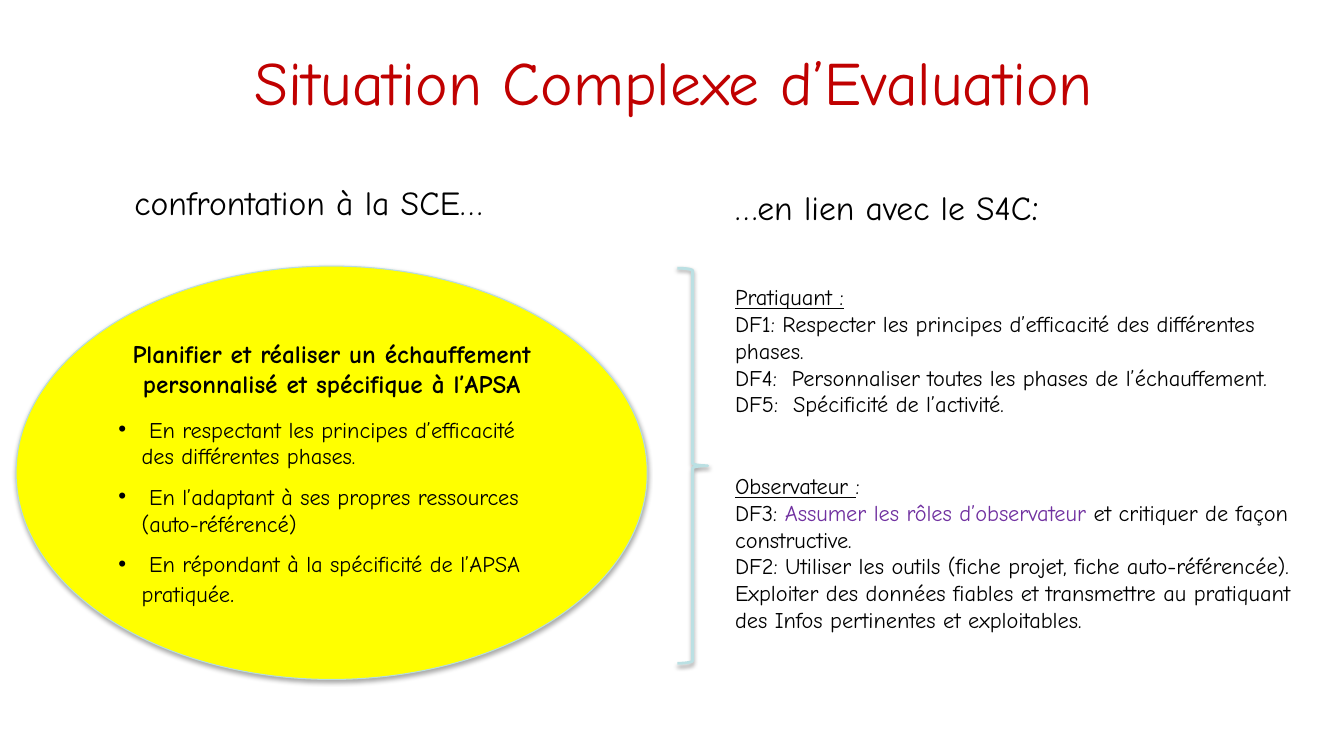
from dataclasses import dataclass

from lxml.etree import SubElement
from pptx import Presentation
from pptx.dml.color import RGBColor
from pptx.enum.shapes import MSO_SHAPE
from pptx.enum.text import MSO_ANCHOR, MSO_AUTO_SIZE, PP_ALIGN
from pptx.oxml.ns import qn
from pptx.util import Inches, Pt

BLACK = RGBColor(0x00, 0x00, 0x00)
RED = RGBColor(0xC0, 0x00, 0x00)
PURPLE = RGBColor(0x70, 0x30, 0xA0)
YELLOW = RGBColor(0xFF, 0xFF, 0x00)
RIM = RGBColor(0xB6, 0xDC, 0xDF)
TEAL = RGBColor(0xBB, 0xE0, 0xE3)
WIDE, HIGH = Inches(13.33), Inches(7.5)
GAP = 39  # space above each role, in points
HANG = Inches(0.23)


@dataclass
class Box:
    """Place and size in percent of the slide."""
    x: float
    y: float
    w: float
    h: float

    def area(self) -> tuple:
        return (round(WIDE * self.x / 100), round(HIGH * self.y / 100),
                round(WIDE * self.w / 100), round(HIGH * self.h / 100))


@dataclass
class Run:
    text: str
    size: float = 16
    color: RGBColor = BLACK
    font: str = "Comic Neue"
    bold: bool = False
    line: bool = False


@dataclass
class Para:
    runs: list
    gap: float = 0
    align: PP_ALIGN = PP_ALIGN.LEFT
    dot: bool = False


def write(shape, paras: list, anchor: MSO_ANCHOR) -> None:
    frame = shape.text_frame
    frame.word_wrap = True
    frame.auto_size = MSO_AUTO_SIZE.NONE
    frame.vertical_anchor = anchor
    for i, para in enumerate(paras):
        p = frame.add_paragraph() if i else frame.paragraphs[0]
        p.alignment = para.align
        p.space_before = Pt(para.gap)
        props = p._p.get_or_add_pPr()
        props.set("marL", str(HANG if para.dot else 0))
        props.set("indent", str(-HANG if para.dot else 0))
        if para.dot:
            SubElement(props, qn("a:buFont"), typeface="Arial")
            SubElement(props, qn("a:buChar"), char="•")
        else:
            SubElement(props, qn("a:buNone"))
        for item in para.runs:
            run = p.add_run()
            run.text = item.text
            font = run.font
            font.name, font.size = item.font, Pt(item.size)
            font.bold, font.underline = item.bold, item.line
            font.color.rgb = item.color


def place(holder, box: Box, paras: list, anchor: MSO_ANCHOR) -> None:
    holder.left, holder.top, holder.width, holder.height = box.area()
    write(holder, paras, anchor)


def draw(slide, kind: MSO_SHAPE, box: Box, rim: RGBColor, width: float,
         fill: RGBColor | None, drop: float, shade: int):
    shape = slide.shapes.add_shape(kind, *box.area())
    if fill is None:
        shape.fill.background()
    else:
        shape.fill.solid()
        shape.fill.fore_color.rgb = fill
    shape.line.color.rgb = rim
    shape.line.width = Pt(width)
    # Soft shadow straight below
    shape.shadow.inherit = False
    glow = SubElement(shape._element.spPr.find(qn("a:effectLst")), qn("a:outerShdw"),
                      blurRad=str(Pt(3.1)), dist=str(Pt(drop)),
                      dir="5400000", rotWithShape="0")
    tint = SubElement(glow, qn("a:srgbClr"), val=str(BLACK))
    SubElement(tint, qn("a:alpha"), val=str(shade * 1000))
    return shape


TITLE = [Para([Run("Situation Complexe d’Evaluation", 44, RED)], align=PP_ALIGN.CENTER)]
LEFT = [Para([Run(" ", 24, font="Arial"), Run("confrontation à la SCE…", 24)])]
RIGHT = [
    Para([Run("…en lien avec le S4C", 24), Run(":", 28)]),
    Para([Run("Pratiquant :", line=True)], GAP),
    Para([Run("DF1: Respecter les principes d’efficacité des différentes phases.")]),
    Para([Run("DF4:  Personnaliser toutes les phases de l’échauffement.")]),
    Para([Run("DF5:  Spécificité de l’activité.")]),
    Para([Run("Observateur ", line=True), Run(":")], GAP),
    Para([Run("DF3: "), Run("Assumer les rôles d’observateur ", color=PURPLE),
          Run("et critiquer de façon constructive.")]),
    Para([Run("DF2: Utiliser les outils (fiche projet, fiche auto-référencée).")]),
    Para([Run("Exploiter des données fiables et transmettre au pratiquant "
              "des Infos pertinentes et exploitables.")]),
]
GOAL = [
    Para([Run("Planifier et réaliser un échauffement personnalisé et spécifique à l’APSA",
              18, bold=True)], align=PP_ALIGN.CENTER),
    Para([Run(" En respectant les principes d’efficacité des différentes phases.")],
         12, dot=True),
    Para([Run(" En l’adaptant à ses propres ressources (auto-référencé)")], 9.6, dot=True),
    Para([Run(" En répondant à la spécificité de l’APSA pratiquée"), Run(".", 18)],
         9.6, dot=True),
]


def main() -> None:
    deck = Presentation()
    deck.slide_width, deck.slide_height = WIDE, HIGH
    slide = deck.slides.add_slide(deck.slide_layouts[3])
    title, left, right = list(slide.placeholders)[:3]

    # Title and the two columns
    place(title, Box(5.18, 2.4, 90, 16.67), TITLE, MSO_ANCHOR.MIDDLE)
    place(left, Box(8.55, 23.33, 44.19, 66), LEFT, MSO_ANCHOR.TOP)
    place(right, Box(53.94, 23.33, 44.19, 69.33), RIGHT, MSO_ANCHOR.TOP)

    # Goal in the ellipse, tied to the roles by the brace
    goal = draw(slide, MSO_SHAPE.OVAL, Box(1.2, 35.2, 46.96, 54.67),
                RIM, 0.75, YELLOW, 1.8, 35)
    write(goal, GOAL, MSO_ANCHOR.MIDDLE)
    draw(slide, MSO_SHAPE.RIGHT_BRACE, Box(50.41, 35.47, 2.25, 52.27),
         TEAL, 2, None, 1.6, 38)

    deck.save("out.pptx")


if __name__ == "__main__":
    main()
